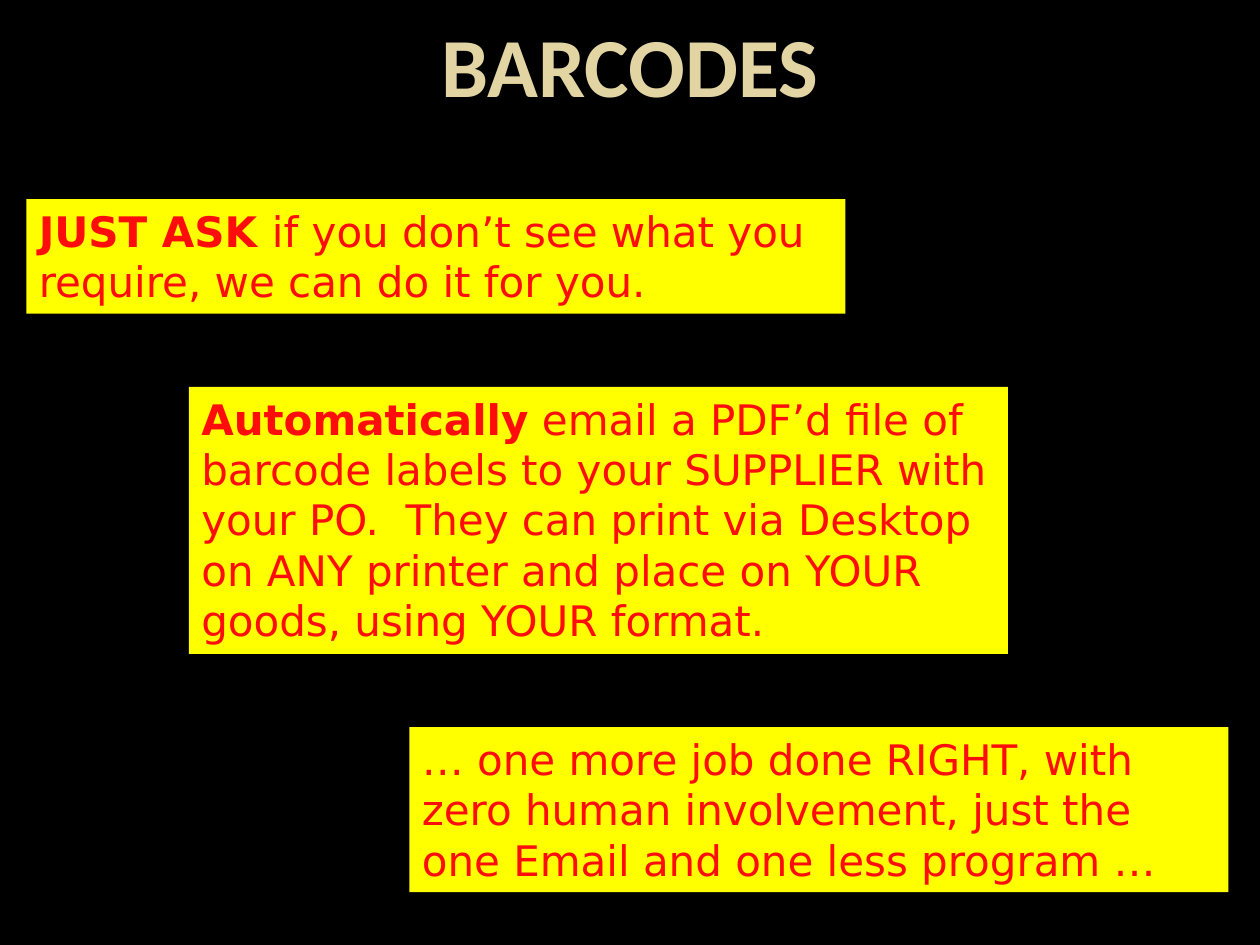
from pptx import Presentation
from pptx.dml.color import RGBColor
from pptx.enum.shapes import MSO_SHAPE as Shape
from pptx.enum.text import MSO_ANCHOR as Anchor, MSO_AUTO_SIZE as AutoSize, PP_ALIGN as Align
from pptx.util import Inches, Pt

THEME = {
    "background": RGBColor(0x00, 0x00, 0x00),
    "title": {"font": "Calibri", "size": 48, "color": RGBColor(0xE2, 0xD5, 0xA3)},
    "note": {"font": "DejaVu Sans", "size": 24, "color": RGBColor(0xFF, 0x0D, 0x0D)},
    "note_fill": RGBColor(0xFF, 0xFF, 0x00),
}


def add_text(paragraph, text, *, font, size, color, bold=False):
    run = paragraph.add_run()
    run.text = text
    run.font.name = font
    run.font.size = Pt(size)
    run.font.color.rgb = color
    run.font.bold = bold


presentation = Presentation()
presentation.slide_width = Inches(10)
presentation.slide_height = Inches(7.5)
slide = presentation.slides.add_slide(presentation.slide_layouts[5])

# Background
slide.background.fill.solid()
slide.background.fill.fore_color.rgb = THEME["background"]

# Title, centred across the slide
margin = Inches(0.21)
title = slide.shapes.title
title.left, title.top = margin, Inches(0.08)
title.width, title.height = presentation.slide_width - 2 * margin, Inches(0.83)
frame = title.text_frame
frame.auto_size = AutoSize.NONE
frame.vertical_anchor = Anchor.BOTTOM
frame.margin_left = frame.margin_right = Inches(0.05)
frame.margin_top = frame.margin_bottom = 0
frame.paragraphs[0].alignment = Align.CENTER
add_text(frame.paragraphs[0], "BARCODES", bold=True, **THEME["title"])

# Yellow notes stepping down to the right: left, height, bold lead, rest
notes = [
    (0.21, 0.91, "JUST ASK ", "if you don’t see what you require, we can do it for you."),
    (1.5, 2.12, "Automatically",
     " email a PDF’d file of barcode labels to your SUPPLIER with your PO.  "
     "They can print via Desktop on ANY printer and place on YOUR goods, "
     "using YOUR format."),
    (3.25, 1.31, "",
     "… one more job done RIGHT, with zero human involvement, just the one "
     "Email and one less program …"),
]
note_width, note_gap = 6.5, 0.58
top = 1.58
for left, height, lead, rest in notes:
    note = slide.shapes.add_shape(
        Shape.RECTANGLE, Inches(left), Inches(top), Inches(note_width), Inches(height))
    note.shadow.inherit = False
    note.fill.solid()
    note.fill.fore_color.rgb = THEME["note_fill"]
    note.line.fill.background()
    frame = note.text_frame
    frame.word_wrap = True
    frame.auto_size = AutoSize.SHAPE_TO_FIT_TEXT
    frame.vertical_anchor = Anchor.TOP
    paragraph = frame.paragraphs[0]
    paragraph.alignment = Align.LEFT
    if lead:
        add_text(paragraph, lead, bold=True, **THEME["note"])
    add_text(paragraph, rest, **THEME["note"])
    top += height + note_gap

presentation.save("out.pptx")
